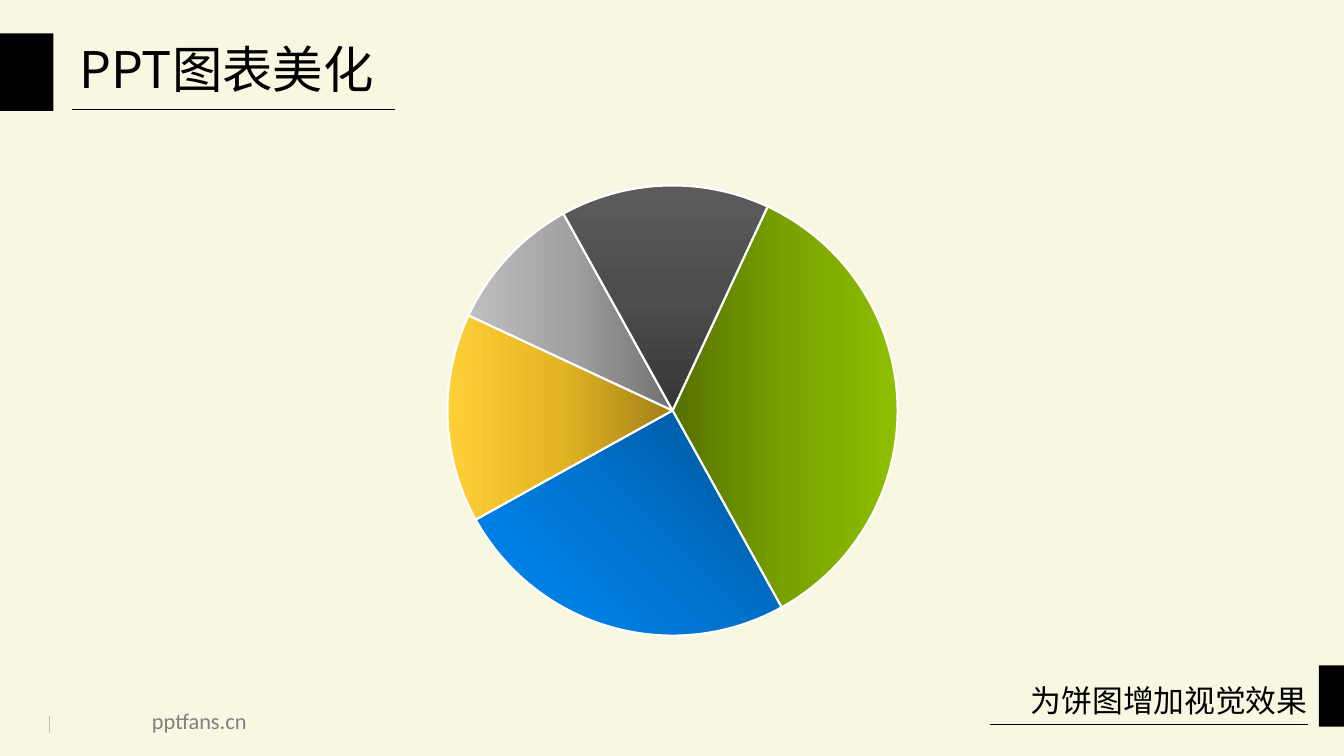
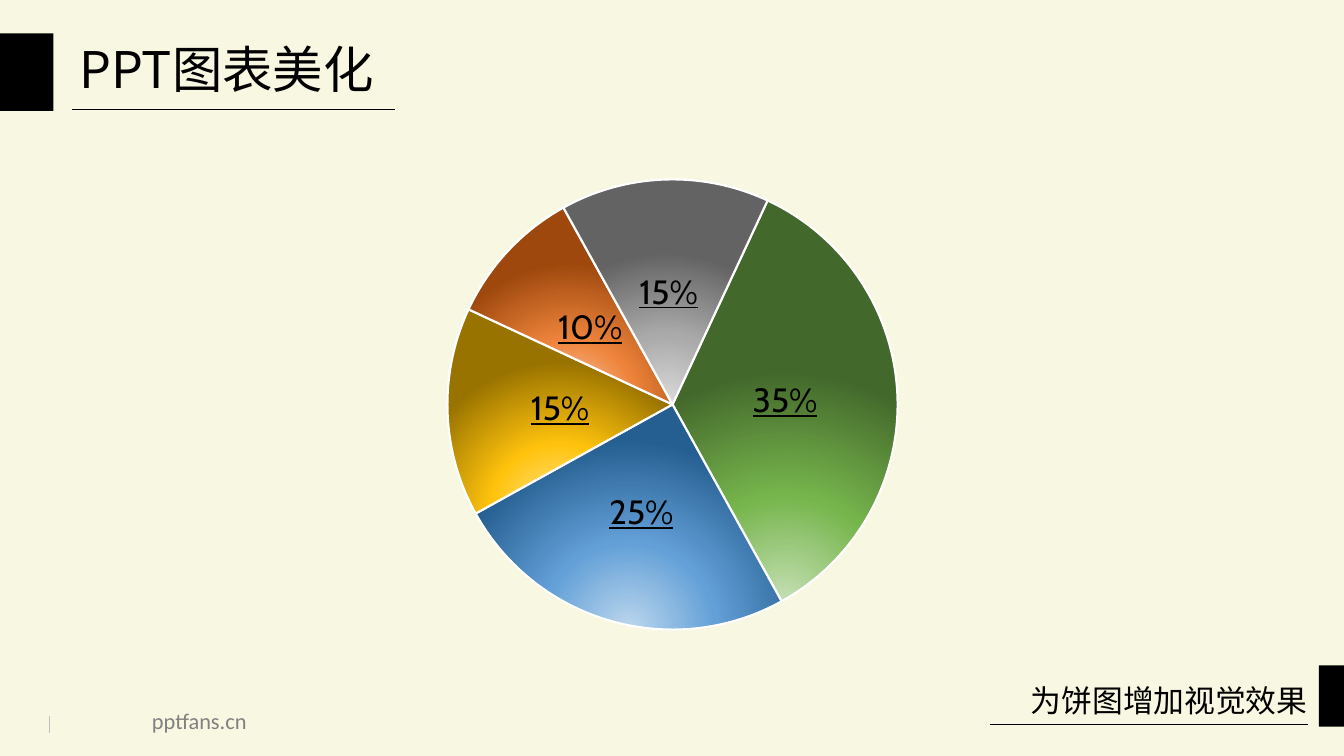
from lxml import etree
from pptx import Presentation
from pptx.chart.data import CategoryChartData
from pptx.dml.color import RGBColor
from pptx.enum.chart import XL_CHART_TYPE, XL_LABEL_POSITION
from pptx.enum.shapes import MSO_CONNECTOR, MSO_SHAPE
from pptx.enum.text import PP_ALIGN
from pptx.oxml.ns import qn
from pptx.util import Pt

PIE = XL_CHART_TYPE.PIE
CENTER_LABEL = XL_LABEL_POSITION.CENTER
STRAIGHT = MSO_CONNECTOR.STRAIGHT
RECTANGLE = MSO_SHAPE.RECTANGLE
LEFT, RIGHT = PP_ALIGN.LEFT, PP_ALIGN.RIGHT

COLORS = {
    "paper": "F8F7E2",
    "ink": "000000",
    "footer": "808080",
    "tick": "BFBFBF",
    "slice_edge": "FFFFFF",
}
CJK_FONT = "Noto Sans CJK SC"
TITLE_STYLE = {"size": Pt(36), "name": CJK_FONT}
SUBTITLE_STYLE = {"size": Pt(22), "name": CJK_FONT}
FOOTER_STYLE = {"size": Pt(16), "name": "Calibri"}
CHART_STYLE = {"size": Pt(18), "name": "Calibri"}
LABEL_STYLE = {"size": Pt(24), "name": "Cabin", "underline": True}

SHARES = {"1": 35, "2": 25, "3": 15, "4": 10, "5": 15}
FIRST_SLICE_ANGLE = 25
PLOT_LAYOUT = {"x": 0.126, "y": 0.127, "w": 0.742, "h": 0.766}

# Each linear slice has its direction in degrees and its three stops.
LINEAR_STOPS = (0, 50, 100)
LINEAR_SLICES = [
    (0, ("557100", "79A100", "8FBF00")),
    (135, ("005191", "0073CF", "0089F5")),
    (180, ("A07F18", "E4B522", "FFCF37")),
    (180, ("717171", "A1A1A1", "BFBFBF")),
    (270, ("363636", "4D4D4D", "5B5B5B")),
]
RADIAL_STOPS = (0, 46, 100)
RADIAL_FOCUS = {"l": 50, "t": 130, "r": 50, "b": -30}
RADIAL_SLICES = [
    ("C5E0B4", "76B54C", "43682B"),
    ("BDD7EE", "63A0D7", "255E91"),
    ("FFE699", "FFC30D", "997300"),
    ("F8CBAD", "EE843B", "9E480E"),
    ("DBDBDB", "AAAAAA", "636363"),
]


def rgb(name):
    return RGBColor.from_string(COLORS[name])


def points(*lengths):
    return [Pt(length) for length in lengths]


def style_font(font, style, color="ink"):
    for attribute, value in style.items():
        setattr(font, attribute, value)
    font.color.rgb = rgb(color)


def add_text(page, box, text, style, color="ink", align=LEFT, wrap=True):
    frame = page.shapes.add_textbox(*points(*box)).text_frame
    frame.word_wrap = wrap
    para = frame.paragraphs[0]
    para.alignment = align
    span = para.add_run()
    span.text = text
    style_font(span.font, style, color)
    east_asian = etree.SubElement(span.font._element, qn("a:ea"))
    east_asian.set("typeface", style["name"])


def add_bar(page, box):
    bar = page.shapes.add_shape(RECTANGLE, *points(*box))
    bar.shadow.inherit = False
    bar.fill.solid()
    bar.fill.fore_color.rgb = rgb("ink")
    bar.line.fill.background()


def add_rule(page, start, end, color="ink", width=0.5):
    rule = page.shapes.add_connector(STRAIGHT, *points(*start, *end))
    rule.line.color.rgb = rgb(color)
    rule.line.width = Pt(width)
    etree.SubElement(rule._element.spPr, qn("a:effectLst"))


def add_header(page, left, top):
    add_bar(page, (left, top, 38.2, 55.4))
    add_rule(page, (left + 51.1, top + 54), (left + 282.2, top + 54))
    add_text(page, (left + 49.7, top, 385.2, 51), "PPT图表美化", TITLE_STYLE)


def add_subtitle(page, right, top):
    add_bar(page, (right - 18, top, 18, 43.9))
    add_rule(page, (right - 253, top + 42.5), (right - 25.4, top + 42.5))
    add_text(page, (right - 261.6, top + 7.9, 242.6, 33.8),
             "为饼图增加视觉效果", SUBTITLE_STYLE, align=RIGHT)


def add_footer(page, left, top):
    add_rule(page, (left, top + 21.6), (left, top + 9.4), "tick", 0.75)
    add_text(page, (left + 66.2, top, 83.5, 26.6), "pptfans.cn",
             FOOTER_STYLE, "footer", wrap=False)


def gradient(stops, colors):
    fill = etree.Element(qn("a:gradFill"), rotWithShape="1")
    stop_list = etree.SubElement(fill, qn("a:gsLst"))
    for position, color in zip(stops, colors):
        stop = etree.SubElement(stop_list, qn("a:gs"), pos=str(position * 1000))
        etree.SubElement(stop, qn("a:srgbClr"), val=color)
    return fill


def linear_gradient(angle, colors):
    fill = gradient(LINEAR_STOPS, colors)
    etree.SubElement(fill, qn("a:lin"), ang=str(angle * 60000), scaled="0")
    return fill


def radial_gradient(colors):
    fill = gradient(RADIAL_STOPS, colors)
    circle = etree.SubElement(fill, qn("a:path"), path="circle")
    focus = etree.SubElement(circle, qn("a:fillToRect"))
    for side, percent in RADIAL_FOCUS.items():
        focus.set(side, str(percent * 1000))
    return fill


def place_plot(chart):
    """Fix the inner plot area and turn the first slice."""
    plot_area = chart._chartSpace.find(".//" + qn("c:plotArea"))
    for old_layout in plot_area.findall(qn("c:layout")):
        plot_area.remove(old_layout)
    layout = etree.Element(qn("c:layout"))
    manual = etree.SubElement(layout, qn("c:manualLayout"))
    settings = {"layoutTarget": "inner", "xMode": "edge", "yMode": "edge"}
    for tag, value in {**settings, **PLOT_LAYOUT}.items():
        etree.SubElement(manual, qn("c:" + tag), val=str(value))
    plot_area.insert(0, layout)
    pie = plot_area.find(qn("c:pieChart"))
    for old_angle in pie.findall(qn("c:firstSliceAng")):
        pie.remove(old_angle)
    etree.SubElement(pie, qn("c:firstSliceAng"), val=str(FIRST_SLICE_ANGLE))


def add_percent_labels(series):
    labels = series.data_labels
    settings = {"show_value": False, "show_percentage": True,
                "number_format": "0%", "number_format_is_linked": False,
                "position": CENTER_LABEL}
    for attribute, value in settings.items():
        setattr(labels, attribute, value)
    style_font(labels.font, LABEL_STYLE)


def add_pie(page, box, fills, labelled):
    data = CategoryChartData()
    data.categories = list(SHARES)
    data.add_series("Series 1", list(SHARES.values()))
    chart = page.shapes.add_chart(PIE, *points(*box), data).chart
    chart.has_title = False
    chart.has_legend = False
    style_font(chart.font, CHART_STYLE)
    plot = chart.plots[0]
    plot.vary_by_categories = True
    series = plot.series[0]
    for index, fill in enumerate(fills):
        edge = series.points[index].format.line
        edge.color.rgb = rgb("slice_edge")
        edge.width = Pt(1.5)
        slice_element = series._element.findall(qn("c:dPt"))[index]
        slice_element.find(qn("c:spPr")).insert(0, fill)
    if labelled:
        add_percent_labels(series)
    place_plot(chart)


def add_pie_page(deck, chart_top, fills, labelled):
    page = deck.slides.add_slide(deck.slide_layouts[6])
    add_header(page, 0, 23.8)
    add_subtitle(page, 960, 475.2)
    add_footer(page, 35.3, 501.8)
    add_pie(page, (265, chart_top, 433.4, 419.8), fills, labelled)


def main():
    deck = Presentation()
    deck.slide_width, deck.slide_height = points(960, 540)
    background = deck.slide_master.background.fill
    background.solid()
    background.fore_color.rgb = rgb("paper")
    linear_fills = [linear_gradient(*item) for item in LINEAR_SLICES]
    radial_fills = [radial_gradient(colors) for colors in RADIAL_SLICES]
    add_pie_page(deck, 79.2, linear_fills, labelled=False)
    add_pie_page(deck, 74.9, radial_fills, labelled=True)
    deck.save("out.pptx")


if __name__ == "__main__":
    main()
